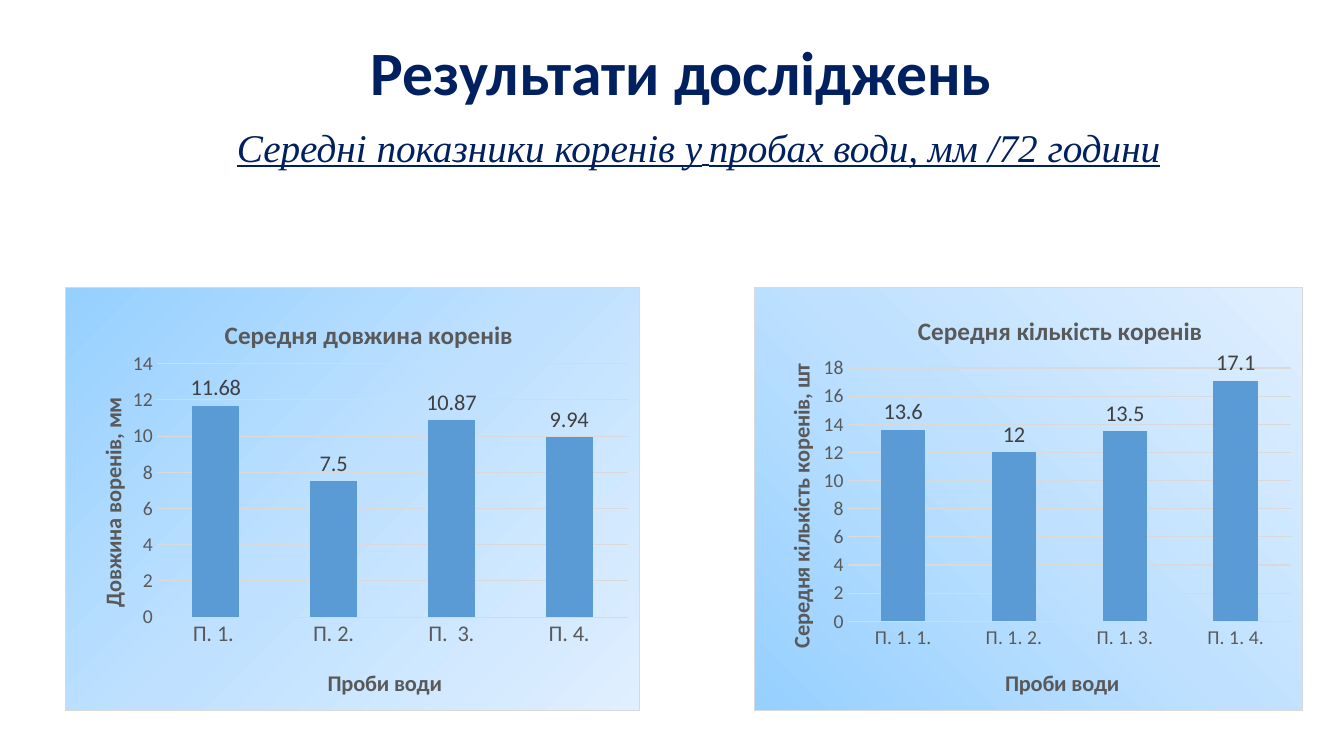
from lxml.etree import fromstring
from pptx import Presentation
from pptx.chart.data import CategoryChartData
from pptx.dml.color import RGBColor
from pptx.enum.chart import XL_CHART_TYPE as ChartType
from pptx.enum.chart import XL_LABEL_POSITION as LabelPosition
from pptx.enum.chart import XL_TICK_MARK as TickMark
from pptx.enum.text import MSO_ANCHOR as Anchor
from pptx.enum.text import PP_ALIGN as Align
from pptx.oxml.ns import nsdecls, qn
from pptx.util import Inches, Pt

NAVY = RGBColor(0x00, 0x20, 0x60)
GRAY = RGBColor(0x59, 0x59, 0x59)
DARK = RGBColor(0x40, 0x40, 0x40)
BLACK = RGBColor(0x00, 0x00, 0x00)
PALE = RGBColor(0xD9, 0xD9, 0xD9)
BLUE = RGBColor(0x5B, 0x9B, 0xD5)
SKY = (RGBColor(0x96, 0xD0, 0xFF), RGBColor(0xBF, 0xE1, 0xFF), RGBColor(0xE0, 0xEF, 0xFF))

WIDTH, HEIGHT = Inches(13.33), Inches(7.5)


def place(left, top, width, height):
    sides = ((left, WIDTH), (top, HEIGHT), (width, WIDTH), (height, HEIGHT))
    return [round(side * share / 100) for share, side in sides]


def style(font, size, color, name="Calibri", bold=False, italic=False, underline=False):
    font.size, font.name = Pt(size), name
    font.bold, font.italic, font.underline = bold, italic, underline
    font.color.rgb = color


def write(para, text, **format):
    span = para.add_run()
    span.text = text
    style(span.font, **format)


def add_box(page, area, anchor=Anchor.TOP, spacing=None):
    box = page.shapes.add_textbox(*place(*area))
    frame = box.text_frame
    frame.word_wrap = True
    frame.vertical_anchor = anchor
    para = frame.paragraphs[0]
    para.alignment = Align.CENTER
    para.line_spacing = spacing
    return para


def set_layout(parent, index, inner=False, **shares):
    for old in parent.findall(qn("c:layout")):
        parent.remove(old)
    target = '<c:layoutTarget val="inner"/>' if inner else ""
    modes = "".join(f'<c:{key}Mode val="edge"/>' for key in "xy")
    values = "".join(f'<c:{key} val="{share}"/>' for key, share in shares.items())
    parent.insert(index, fromstring(
        f'<c:layout {nsdecls("c")}><c:manualLayout>{target}{modes}{values}'
        '</c:manualLayout></c:layout>'))


def add_title(title, text, size, corner):
    write(title.text_frame.paragraphs[0], text, size=size, color=GRAY, bold=True)
    set_layout(title.element, 1, x=corner[0], y=corner[1])


def set_background(chart, focus):
    stops = "".join(
        f'<a:gs pos="{index * 50000}"><a:srgbClr val="{color}"/></a:gs>'
        for index, color in enumerate(SKY))
    sides = " ".join(f'{side}="100000"' for side in focus)
    chart.element.find(qn("c:chart")).addnext(fromstring(
        f'<c:spPr {nsdecls("c", "a")}><a:gradFill><a:gsLst>{stops}</a:gsLst>'
        f'<a:path path="circle"><a:fillToRect {sides}/></a:path></a:gradFill>'
        f'<a:ln w="9525"><a:solidFill><a:srgbClr val="{PALE}"/></a:solidFill></a:ln></c:spPr>'))


def set_axis(axis, title, size, corner):
    axis.major_tick_mark = axis.minor_tick_mark = TickMark.NONE
    axis.format.line.fill.background()
    style(axis.tick_labels.font, size, GRAY)
    add_title(axis.axis_title, title, 16, corner)


def add_columns(page, area, title, value_title, names, values, top, focus,
                name_size, plot_area, corners):
    data = CategoryChartData()
    data.categories = names
    data.add_series("Series 1", values)
    chart = page.shapes.add_chart(ChartType.COLUMN_CLUSTERED, *place(*area), data).chart
    chart.has_legend = False
    style(chart.font, 10, BLACK)
    set_background(chart, focus)
    add_title(chart.chart_title, title, 18, corners[0])
    set_axis(chart.category_axis, "Проби води", name_size, corners[1])
    set_axis(chart.value_axis, value_title, 14, corners[2])

    scale = chart.value_axis
    scale.minimum_scale, scale.maximum_scale, scale.major_unit = 0, top, 2
    grid = scale.major_gridlines.format.line
    grid.color.rgb, grid.width = PALE, Pt(0.75)

    plot = chart.plots[0]
    plot.gap_width, plot.vary_by_categories = 150, False
    fill = plot.series[0].format.fill
    fill.solid()
    fill.fore_color.rgb = BLUE
    plot.has_data_labels = True
    labels = plot.data_labels
    labels.show_value, labels.position = True, LabelPosition.OUTSIDE_END
    style(labels.font, 16, DARK)
    x, y, w, h = plot_area
    set_layout(chart.element.find(".//" + qn("c:plotArea")), 0, inner=True, x=x, y=y, w=w, h=h)


def main():
    deck = Presentation()
    deck.slide_width, deck.slide_height = WIDTH, HEIGHT
    page = deck.slides.add_slide(deck.slide_layouts[6])

    heading = add_box(page, (24.46, 0.4, 52.44, 19.33), Anchor.MIDDLE, 0.9)
    write(heading, "Результати досліджень", size=44, color=NAVY, bold=True)

    subtitle = add_box(page, (4.8, 16.27, 94.37, 6.93), spacing=Pt(30))
    for text, size, name in (("Середні показники коренів у", 28, "Times New Roman"),
                             (" ", 20, "Calibri"),
                             ("пробах води, мм /72 години", 28, "Times New Roman")):
        write(subtitle, text, size=size, color=NAVY, name=name, italic=True, underline=True)

    add_columns(page, (4.8, 38, 42.83, 56), "Середня довжина коренів", "Довжина воренів, мм",
                ("П. 1. ", "П. 2.", "П.  3.", "П. 4."), (11.68, 7.5, 10.87, 9.94),
                top=14, focus="rb", name_size=16, plot_area=(0.16, 0.18, 0.82, 0.6),
                corners=((0.27, 0.06), (0.45, 0.89), (0.05, 0.25)))
    add_columns(page, (56.11, 38, 40.81, 56), "Середня кількість коренів",
                "Середня кількість коренів, шт",
                [f"П. 1. {number}." for number in range(1, 5)], (13.6, 12, 13.5, 17.1),
                top=18, focus="tr", name_size=14, plot_area=(0.17, 0.19, 0.81, 0.6),
                corners=((0.29, 0.05), (0.45, 0.89), (0.05, 0.17)))
    deck.save("out.pptx")


if __name__ == "__main__":
    main()
